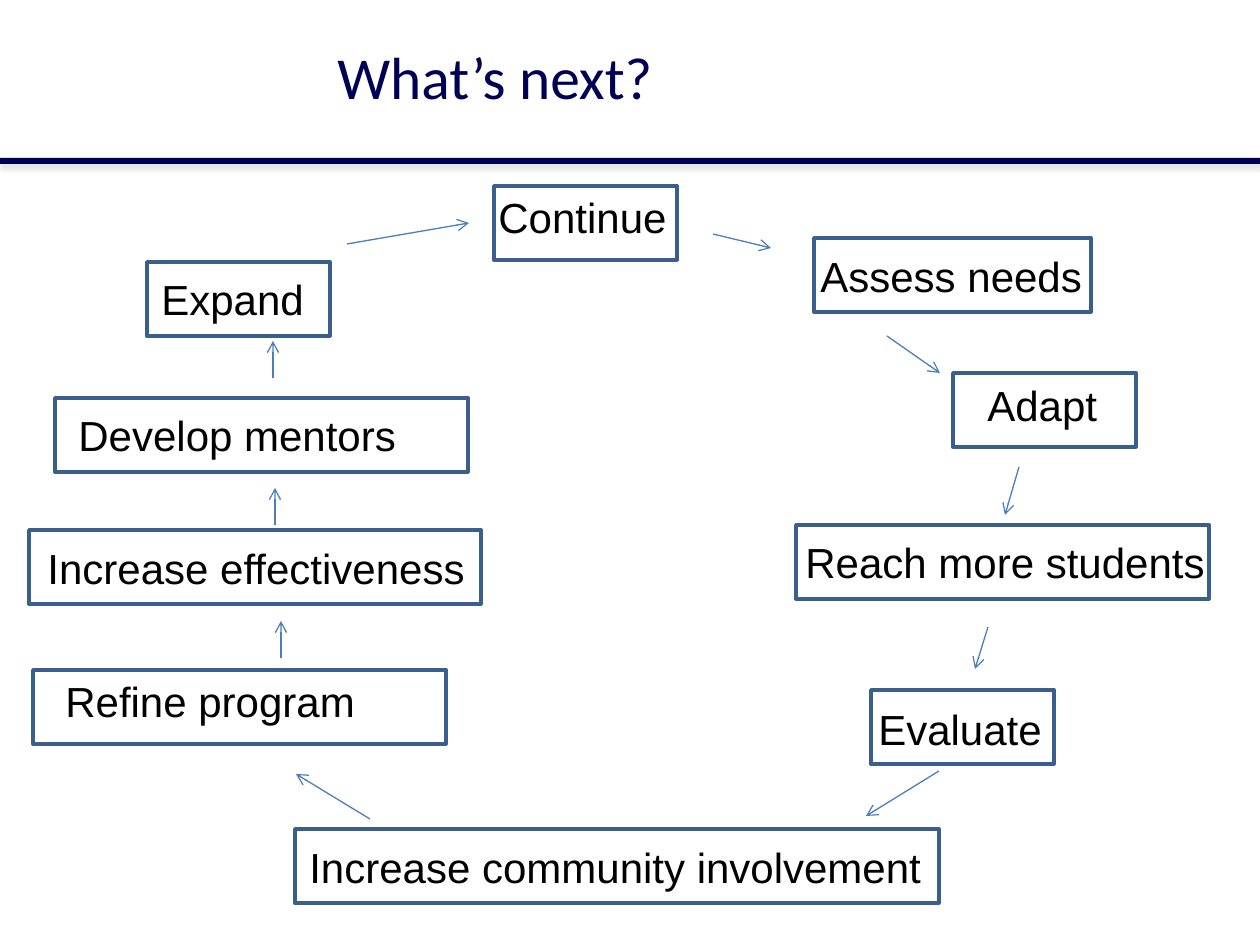
"""Builds the "What's next?" slide: a cycle of program steps joined by arrows."""
from dataclasses import dataclass

import pptx
import pptx.dml.color
import pptx.enum.shapes
import pptx.enum.text
import pptx.oxml
import pptx.oxml.ns
import pptx.util

NS = pptx.oxml.ns.nsdecls("a")


@dataclass(frozen=True)
class Theme:
    navy: str = "000054"
    ink: str = "000000"
    frame: str = "3A5F8C"
    arrow: str = "4B7EBC"
    shadow: str = "808080"
    title_font: str = "Calibri"
    step_font: str = "Arial"
    title_size: int = 34
    step_size: int = 24
    frame_weight: float = 2
    arrow_weight: float = 0.75


def px(length):
    return pptx.util.Emu(round(length * 914400 / 126))


def rgb(value):
    return pptx.dml.color.RGBColor.from_string(value)


class SlideBuilder:
    def __init__(self, slide, theme):
        self.slide = slide
        self.theme = theme

    def text(self, words, box, font, size, color, wrap=False,
             anchor=pptx.enum.text.MSO_ANCHOR.TOP):
        frame = self.slide.shapes.add_textbox(*map(px, box)).text_frame
        frame.word_wrap = wrap
        frame.vertical_anchor = anchor
        if not wrap:
            frame.auto_size = pptx.enum.text.MSO_AUTO_SIZE.SHAPE_TO_FIT_TEXT
        run = frame.paragraphs[0].add_run()
        run.text = words
        run.font.name = font
        run.font.size = pptx.util.Pt(size)
        run.font.color.rgb = rgb(color)

    def rectangle(self, box):
        shape = self.slide.shapes.add_shape(
            pptx.enum.shapes.MSO_SHAPE.RECTANGLE, *map(px, box))
        shape.shadow.inherit = False
        return shape

    def title(self, words, box):
        self.text(words, box, self.theme.title_font, self.theme.title_size,
                  self.theme.navy, True, pptx.enum.text.MSO_ANCHOR.MIDDLE)

    def rule(self, box):
        bar = self.rectangle(box)
        bar.fill.solid()
        bar.fill.fore_color.rgb = rgb(self.theme.navy)
        bar.line.fill.background()
        effects = bar._element.spPr.find(pptx.oxml.ns.qn("a:effectLst"))
        effects.append(pptx.oxml.parse_xml(
            f'<a:outerShdw {NS} blurRad="39370" dist="22860" dir="5400000" '
            f'rotWithShape="0"><a:srgbClr val="{self.theme.shadow}">'
            '<a:alpha val="35000"/></a:srgbClr></a:outerShdw>'))

    def step(self, label, text_box, frame_box):
        self.text(label, (*text_box, 63), self.theme.step_font,
                  self.theme.step_size, self.theme.ink)
        outline = self.rectangle((*frame_box, 74))
        outline.fill.background()
        outline.line.color.rgb = rgb(self.theme.frame)
        outline.line.width = pptx.util.Pt(self.theme.frame_weight)

    def arrow(self, *ends):
        link = self.slide.shapes.add_connector(
            pptx.enum.shapes.MSO_CONNECTOR.STRAIGHT, *map(px, ends))
        link.line.color.rgb = rgb(self.theme.arrow)
        link.line.width = pptx.util.Pt(self.theme.arrow_weight)
        link.line._get_or_add_ln().append(
            pptx.oxml.parse_xml(f'<a:tailEnd {NS} type="arrow"/>'))
        link._element.spPr.append(pptx.oxml.parse_xml(f"<a:effectLst {NS}/>"))


STEPS = [
    ("Continue", (486, 185, 195), (494, 186, 183)),
    ("Assess needs", (808, 244, 290), (814, 238, 277)),
    ("Adapt", (975, 373, 136), (953, 373, 183)),
    ("Reach more students", (793, 530, 428), (796, 525, 413)),
    ("Evaluate", (866, 697, 190), (871, 690, 183)),
    ("Increase community involvement", (297, 835, 644), (295, 829, 644)),
    ("Refine program", (53, 669, 318), (33, 670, 413)),
    ("Increase effectiveness", (35, 536, 447), (29, 530, 452)),
    ("Develop mentors", (66, 403, 347), (55, 398, 413)),
    ("Expand", (149, 267, 169), (147, 262, 183)),
]

ARROWS = [
    (713, 234, 771, 248),
    (887, 336, 940, 373),
    (1019, 467, 1005, 515),
    (988, 627, 975, 669),
    (939, 771, 866, 816),
    (370, 819, 296, 774),
    (281, 658, 281, 621),
    (275, 525, 275, 488),
    (273, 378, 273, 341),
    (347, 244, 469, 223),
]


def main():
    deck = pptx.Presentation()
    deck.slide_width, deck.slide_height = px(1260), px(945)
    cycle = SlideBuilder(deck.slides.add_slide(deck.slide_layouts[6]), Theme())
    cycle.rule((0, 158, 1260, 6))
    cycle.title("What’s next?", (325, 8, 924, 136))
    for step in STEPS:
        cycle.step(*step)
    for ends in ARROWS:
        cycle.arrow(*ends)
    deck.save("out.pptx")


if __name__ == "__main__":
    main()
